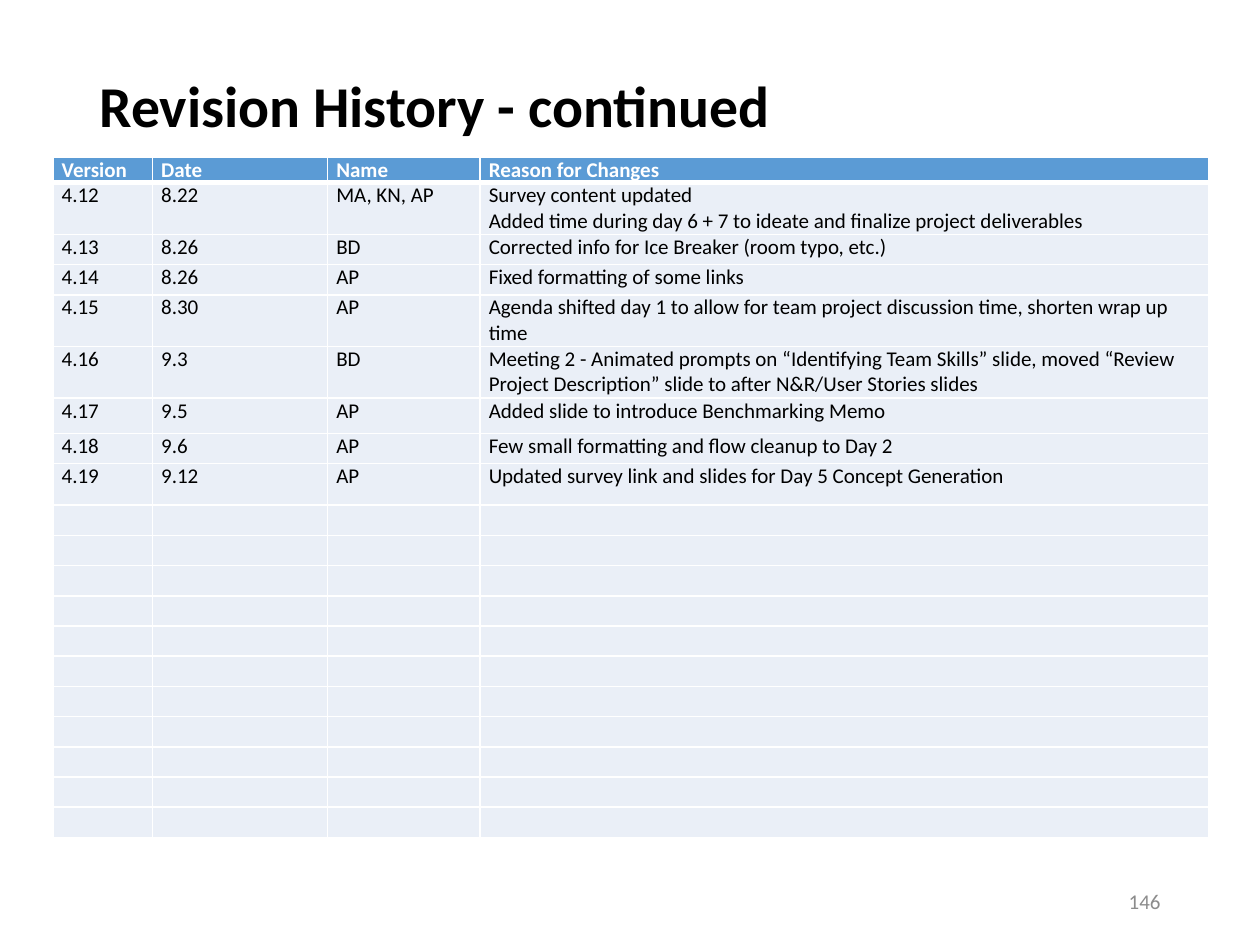
from lxml.etree import SubElement
from pptx import Presentation
from pptx.dml.color import RGBColor
from pptx.enum.text import MSO_ANCHOR, PP_ALIGN
from pptx.oxml.ns import qn
from pptx.util import Inches, Pt

FONT = "Calibri"
BLACK = RGBColor(0x00, 0x00, 0x00)
WHITE = RGBColor(0xFF, 0xFF, 0xFF)
GRAY = RGBColor(0x8C, 0x8C, 0x8C)
HEADER_BLUE = RGBColor(0x5B, 0x9B, 0xD5)
PALE_BLUE = RGBColor(0xEA, 0xEF, 0xF7)

COLUMN_WIDTHS = [0.79, 1.39, 1.21, 5.78]
ROW_HEIGHTS = [0.2, 0.41, 0.24, 0.24, 0.41, 0.41, 0.28, 0.24, 0.33] + [0.24] * 11
REVISIONS = [
    ("Version", "Date", "Name", "Reason for Changes"),
    ("4.12", "8.22", "MA, KN, AP",
     "Survey content updated\n"
     "Added time during day 6 + 7 to ideate and finalize project deliverables"),
    ("4.13", "8.26", "BD", "Corrected info for Ice Breaker (room typo, etc.)"),
    ("4.14", "8.26", "AP", "Fixed formatting of some links"),
    ("4.15", "8.30", "AP",
     "Agenda shifted day 1 to allow for team project discussion time, shorten wrap up time"),
    ("4.16", "9.3", "BD",
     "Meeting 2 - Animated prompts on “Identifying Team Skills” slide, moved “Review "
     "Project Description” slide to after N&R/User Stories slides"),
    ("4.17", "9.5", "AP", "Added slide to introduce Benchmarking Memo"),
    ("4.18", "9.6", "AP", "Few small formatting and flow cleanup to Day 2"),
    ("4.19", "9.12", "AP", "Updated survey link and slides for Day 5 Concept Generation"),
]


def add_run(p, text, size, color, bold=False):
    r = p.add_run()
    r.text = text
    r.font.name = FONT
    r.font.size = Pt(size)
    r.font.bold = bold
    r.font.color.rgb = color


def set_borders(cell, bottom_width):
    """Draw white cell edges; call before the fill, which must follow them in the XML."""
    tc_pr = cell._tc.get_or_add_tcPr()
    for side in ("L", "R", "T", "B"):
        width = bottom_width if side == "B" else 1
        ln = SubElement(tc_pr, qn(f"a:ln{side}"), w=str(Pt(width)))
        fill = SubElement(ln, qn("a:solidFill"))
        SubElement(fill, qn("a:srgbClr"), val=str(WHITE))


prs = Presentation()
prs.slide_width = Inches(10)
prs.slide_height = Inches(7.5)
s = prs.slides.add_slide(prs.slide_layouts[6])

# Title
title = s.shapes.add_textbox(Inches(0.69), Inches(0.4), Inches(8.62), Inches(1.45))
tf = title.text_frame
tf.word_wrap = True
tf.vertical_anchor = MSO_ANCHOR.MIDDLE
tf.margin_bottom = Inches(0.58)
tf.paragraphs[0].line_spacing = 0.9
add_run(tf.paragraphs[0], "Revision History - continued", 33, BLACK, bold=True)

# Revision table
table = s.shapes.add_table(
    len(ROW_HEIGHTS), len(COLUMN_WIDTHS), Inches(0.42), Inches(1.25),
    Inches(sum(COLUMN_WIDTHS)), Inches(sum(ROW_HEIGHTS))).table
for column, width in zip(table.columns, COLUMN_WIDTHS):
    column.width = Inches(width)

for i, height in enumerate(ROW_HEIGHTS):
    table.rows[i].height = Inches(height)
    is_header = i == 0
    texts = REVISIONS[i] if i < len(REVISIONS) else [""] * len(COLUMN_WIDTHS)
    for j, text in enumerate(texts):
        cell = table.cell(i, j)
        cell.margin_left = cell.margin_right = Inches(0.07)
        cell.margin_top = cell.margin_bottom = 0
        set_borders(cell, 3 if is_header else 1)
        cell.fill.solid()
        cell.fill.fore_color.rgb = HEADER_BLUE if is_header else PALE_BLUE
        tf = cell.text_frame
        if not text:
            # Keeps empty rows from growing to the default 18 pt
            SubElement(tf.paragraphs[0]._p, qn("a:endParaRPr"), sz="1200")
            continue
        for k, line in enumerate(text.split("\n")):
            p = tf.add_paragraph() if k else tf.paragraphs[0]
            add_run(p, line, 12, WHITE if is_header else BLACK, bold=is_header)

# Slide number
number = s.shapes.add_textbox(Inches(7.06), Inches(6.95), Inches(2.25), Inches(0.4))
tf = number.text_frame
tf.word_wrap = True
tf.vertical_anchor = MSO_ANCHOR.MIDDLE
tf.paragraphs[0].alignment = PP_ALIGN.RIGHT
add_run(tf.paragraphs[0], "146", 12, GRAY)

prs.save("out.pptx")
